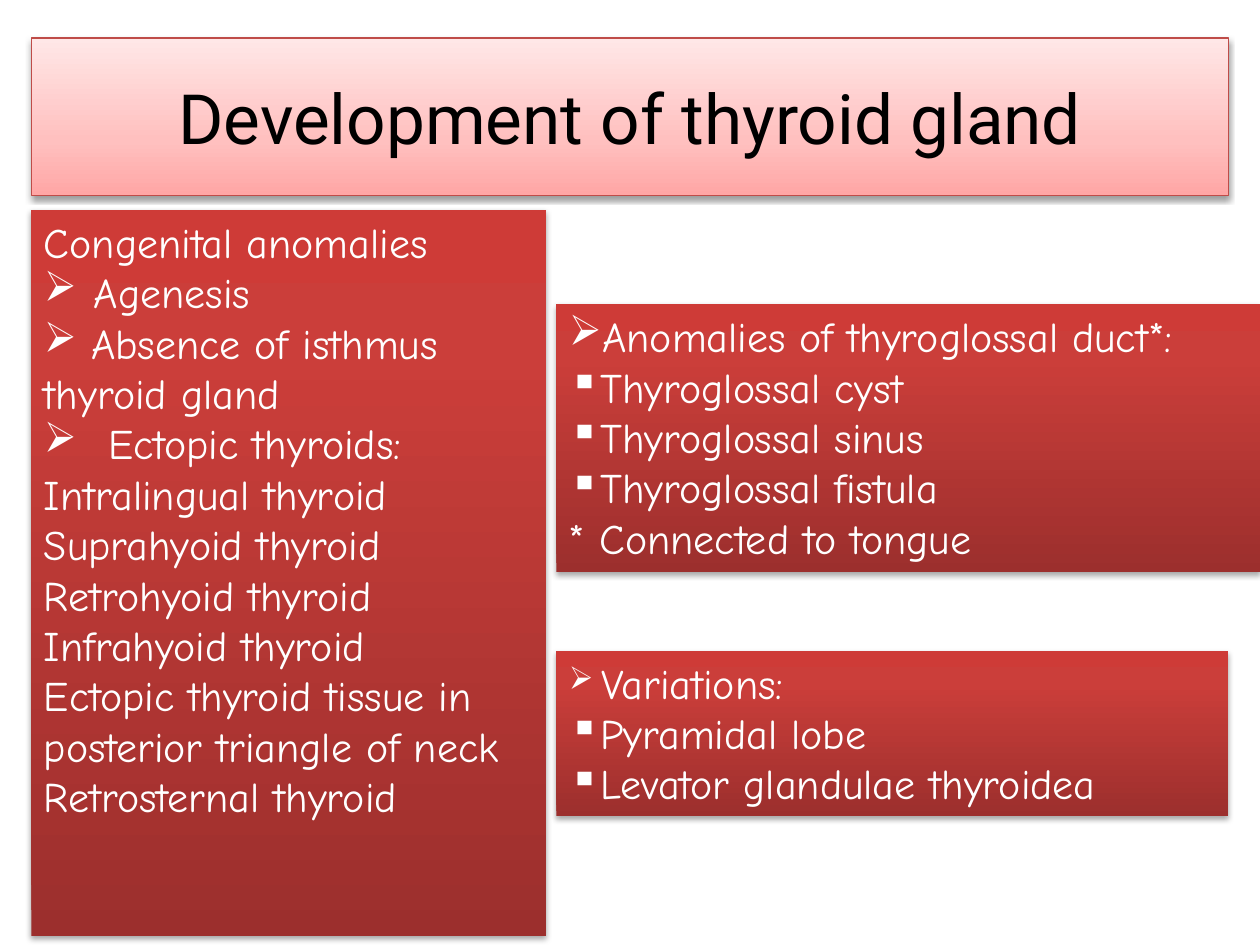
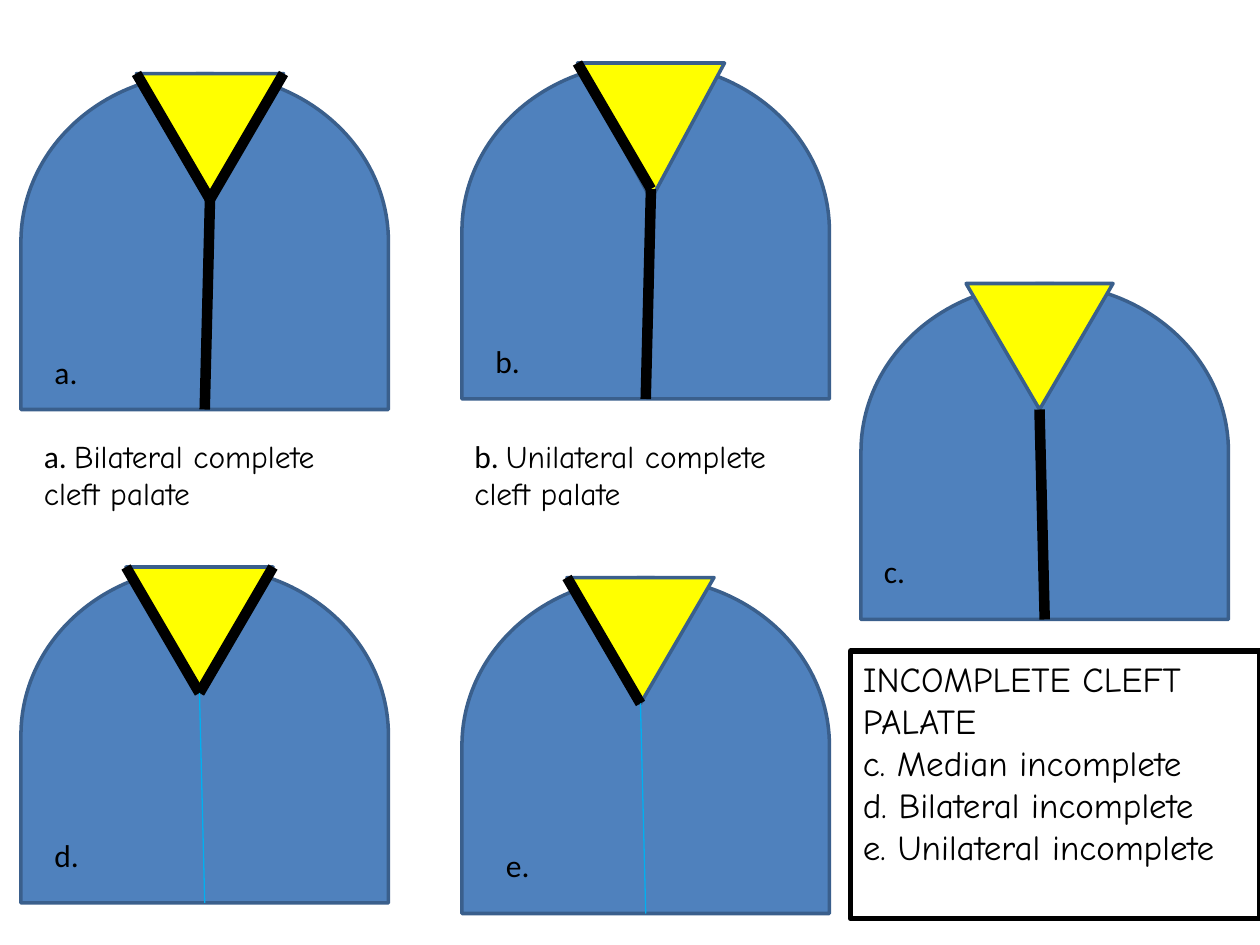
from copy import deepcopy

from lxml import etree
from pptx import Presentation
from pptx.dml.color import RGBColor
from pptx.enum.shapes import MSO_CONNECTOR, MSO_SHAPE
from pptx.enum.text import MSO_ANCHOR, PP_ALIGN
from pptx.oxml.ns import qn
from pptx.util import Pt

PX = 9525
RECT = MSO_SHAPE.RECTANGLE
ARCH = MSO_SHAPE.FLOWCHART_DELAY
TRIANGLE = MSO_SHAPE.ISOSCELES_TRIANGLE
STRAIGHT = MSO_CONNECTOR.STRAIGHT
TOP, MIDDLE = MSO_ANCHOR.TOP, MSO_ANCHOR.MIDDLE
LEFT, CENTER = PP_ALIGN.LEFT, PP_ALIGN.CENTER

HAND, PLAIN, HEADING = "Comic Neue", "Calibri", "Roboto"
BLACK, WHITE = "000000", "FFFFFF"
BLUE, BLUE_EDGE, YELLOW, CYAN = "4F81BD", "3A5F8C", "FFFF00", "00B0F0"
PINK_STOPS = [(0, "FFA6A5"), (0.35, "FFC0BF"), (1, "FFE7E7")]
RED_STOPS = [(0, "9C2F2D"), (0.8, "CB3E3A"), (1, "CE3B37")]

color = RGBColor.from_string


def px(*lengths):
    return [length * PX for length in lengths]


def shade(panel, stops, shadow_opacity):
    panel.fill.gradient()
    panel.fill.gradient_angle = 90
    stop_list = panel._element.spPr.find(qn("a:gradFill")).find(qn("a:gsLst"))
    stop_list.insert(1, deepcopy(stop_list[0]))
    for stop, (position, tint) in zip(panel.fill.gradient_stops, stops):
        stop.position = position
        stop.color.rgb = color(tint)
    panel.shadow.inherit = False
    effects = panel._element.spPr.find(qn("a:effectLst"))
    shadow = etree.SubElement(effects, qn("a:outerShdw"), blurRad="40000",
                              dist="22000", dir="5400000", rotWithShape="0")
    shadow_color = etree.SubElement(shadow, qn("a:srgbClr"), val=BLACK)
    etree.SubElement(shadow_color, qn("a:alpha"), val=str(shadow_opacity * 1000))


prs = Presentation()
prs.slide_width, prs.slide_height = px(960, 720)

thyroid = prs.slides.add_slide(prs.slide_layouts[5])
title = thyroid.shapes.title
title.left, title.top, title.width, title.height = px(24, 29, 912, 120)
shade(title, PINK_STOPS, 38)
title.line.color.rgb = color("BF4C48")
title.line.width = Pt(0.75)
title.text_frame.text = "Development of thyroid gland"
title.text_frame.vertical_anchor = MIDDLE
heading = title.text_frame.paragraphs[0]
heading.alignment = CENTER
heading.font.name = HEADING
heading.font.size = Pt(39.6)
heading.font.color.rgb = color(BLACK)

# each item: bullet, hanging indent, bullet size in percent, wording
panels = [
    ((24, 160, 392, 553), [
        ("", 0, 100, "Congenital anomalies"),
        ("➢", 38, 100, "Agenesis"),
        ("➢", 0, 100, " Absence of isthmus thyroid gland"),
        ("➢", 49, 100, "Ectopic thyroids:"),
        ("", 0, 100, "Intralingual thyroid"),
        ("", 0, 100, "Suprahyoid thyroid"),
        ("", 0, 100, "Retrohyoid thyroid"),
        ("", 0, 100, "Infrahyoid thyroid"),
        ("", 0, 100, "Ectopic thyroid tissue in posterior triangle of neck"),
        ("", 0, 100, "Retrosternal thyroid"),
    ]),
    ((424, 232, 536, 204), [
        ("➢", 0, 100, "Anomalies of thyroglossal duct*:"),
        ("▪", 22, 100, "Thyroglossal cyst"),
        ("▪", 22, 100, "Thyroglossal sinus"),
        ("▪", 22, 100, "Thyroglossal fistula"),
        ("", 0, 100, "* Connected to tongue"),
    ]),
    ((424, 496, 512, 126), [
        ("➢", 25, 75, "Variations:"),
        ("▪", 22, 100, "Pyramidal lobe"),
        ("▪", 22, 100, "Levator glandulae thyroidea"),
    ]),
]
for place, items in panels:
    panel = thyroid.shapes.add_shape(RECT, *px(*place))
    shade(panel, RED_STOPS, 35)
    panel.line.fill.background()
    frame = panel.text_frame
    frame.word_wrap = True
    frame.vertical_anchor = TOP
    frame.text = "\n".join(wording for *_, wording in items)
    for paragraph, (bullet, hang, percent, _) in zip(frame.paragraphs, items):
        paragraph.alignment = LEFT
        paragraph.font.name = HAND
        paragraph.font.size = Pt(24)
        paragraph.font.color.rgb = color(WHITE)
        if bullet:
            properties = paragraph._p.get_or_add_pPr()
            properties.set("marL", str(hang * PX))
            properties.set("indent", str(-hang * PX))
            properties.insert(0, properties.makeelement(qn("a:buChar"), {"char": bullet}))
            properties.insert(0, properties.makeelement(
                qn("a:buSzPct"), {"val": str(percent * 1000)}))

palate = prs.slides.add_slide(prs.slide_layouts[6])

# each palate: letter, arch, wedge, wedge height, label, cleft sides, midline shift, midline colour and width
palates = [
    ("a.", (28, 44), (104, 56), 96, (32, 264), (0, 112), -4, BLACK, 6),
    ("b.", (364, 36), (440, 48), 104, (368, 256), (0,), -4, BLACK, 6),
    ("c.", (668, 204), (736, 216), 96, (664, 416), (), 4, BLACK, 6),
    ("d.", (28, 420), (96, 432), 96, (32, 632), (0, 112), 4, CYAN, 0.75),
    ("e.", (364, 428), (432, 440), 96, (376, 640), (0,), 4, CYAN, 0.75),
]
for letter, arch_at, wedge_at, wedge_height, label_at, sides, shift, tint, weight in palates:
    parts = [
        (ARCH, (*arch_at, 256, 280), 270, BLUE),
        (TRIANGLE, (*wedge_at, 112, wedge_height), 180, YELLOW),
    ]
    for outline, place, turn, paint in parts:
        part = palate.shapes.add_shape(outline, *px(*place))
        part.rotation = turn
        part.shadow.inherit = False
        part.fill.solid()
        part.fill.fore_color.rgb = color(paint)
        part.line.color.rgb = color(BLUE_EDGE)
        part.line.width = Pt(2)

    x, y = wedge_at
    apex = (x + 56, y + 96)
    clefts = [((x + side, y), apex, BLACK, 6) for side in sides]
    clefts.append((apex, (apex[0] + shift, apex[1] + 160), tint, weight))
    for start, end, stroke, width in clefts:
        cleft = palate.shapes.add_connector(STRAIGHT, *px(*start, *end))
        cleft.line.color.rgb = color(stroke)
        cleft.line.width = Pt(width)
        etree.SubElement(cleft._element.spPr, qn("a:effectLst"))

    label = palate.shapes.add_textbox(*px(*label_at, 64, 38)).text_frame
    label.word_wrap = True
    label.text = letter
    label.paragraphs[0].font.name = PLAIN
    label.paragraphs[0].font.size = Pt(18)
    label.paragraphs[0].font.color.rgb = color(BLACK)

for left, letter, wording in [
    (24, "a. ", "Bilateral complete cleft palate"),
    (352, "b. ", "Unilateral complete cleft palate"),
]:
    caption = palate.shapes.add_textbox(*px(left, 328, 264, 68)).text_frame
    caption.word_wrap = True
    paragraph = caption.paragraphs[0]
    paragraph.font.size = Pt(18)
    paragraph.font.color.rgb = color(BLACK)
    for text, face in [(letter, PLAIN), (wording, HAND)]:
        run = paragraph.add_run()
        run.text = text
        run.font.name = face

legend = palate.shapes.add_shape(RECT, *px(648, 496, 312, 204))
legend.shadow.inherit = False
legend.fill.background()
legend.line.color.rgb = color(BLACK)
legend.line.width = Pt(3)
legend.text_frame.word_wrap = True
legend.text_frame.vertical_anchor = TOP
legend.text_frame.text = "\n".join([
    "INCOMPLETE CLEFT PALATE",
    "c. Median incomplete",
    "d. Bilateral incomplete",
    "e. Unilateral incomplete",
])
for paragraph in legend.text_frame.paragraphs:
    paragraph.alignment = LEFT
    paragraph.font.name = HAND
    paragraph.font.size = Pt(20)
    paragraph.font.color.rgb = color(BLACK)

prs.save("out.pptx")
